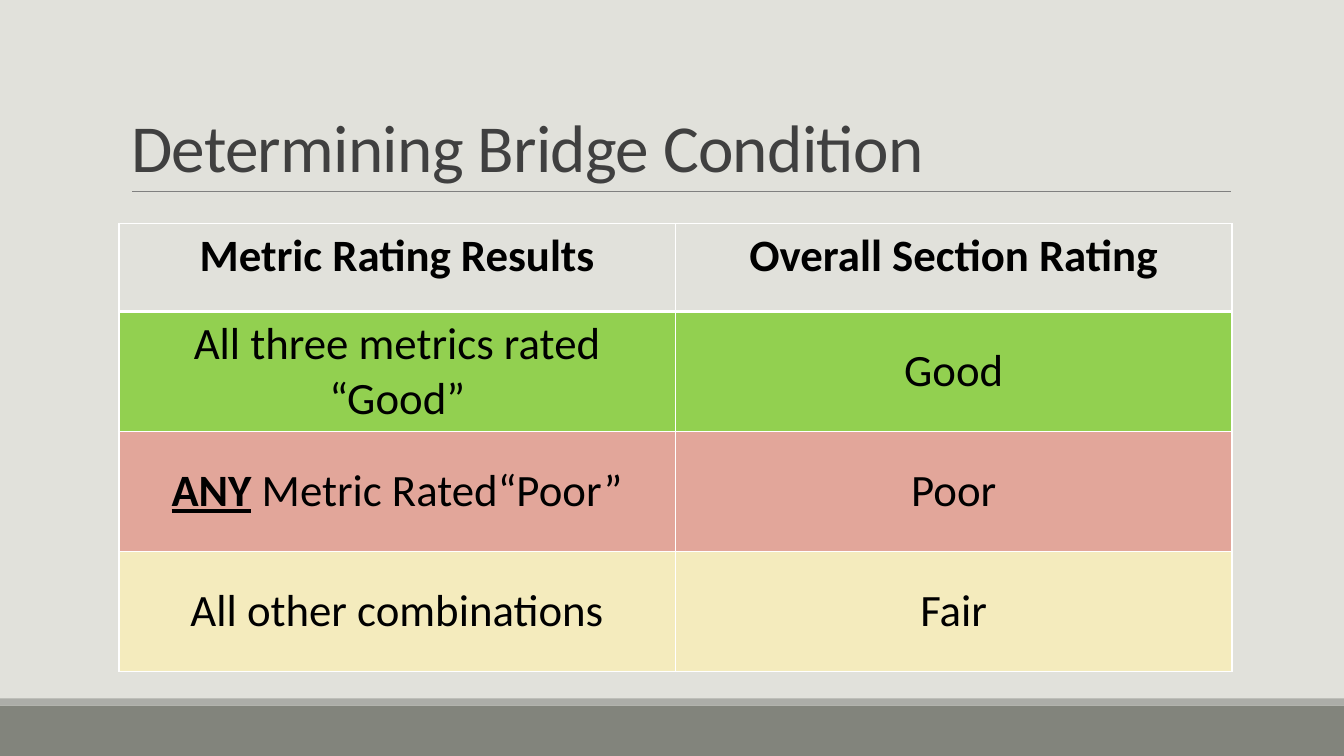
from lxml.etree import SubElement
from pptx import Presentation
from pptx.dml.color import RGBColor
from pptx.enum.shapes import MSO_CONNECTOR as Connector, MSO_SHAPE as Preset
from pptx.enum.text import MSO_ANCHOR as Anchor, PP_ALIGN as Align
from pptx.oxml.ns import qn
from pptx.util import Inches, Pt

WIDTH, HEIGHT = Inches(13.33), Inches(7.5)
FONT = "Calibri"
PAPER = RGBColor(0xE1, 0xE1, 0xDB)
BAND = RGBColor(0x82, 0x84, 0x7C)
STRIPE = RGBColor(0xAC, 0xAD, 0xA8)
RULE = RGBColor(0x80, 0x80, 0x80)
HEADING = RGBColor(0x40, 0x40, 0x40)
INK = RGBColor(0, 0, 0)
WHITE = RGBColor(0xFF, 0xFF, 0xFF)
GREEN = RGBColor(0x92, 0xD0, 0x50)
RED = RGBColor(0xE2, 0xA6, 0x9A)
YELLOW = RGBColor(0xF4, 0xEB, 0xBD)

COLUMN = Inches(5.52)
HEADER_ROW, RATING_ROW = Inches(0.87), Inches(1.19)
HEADERS = ("Metric Rating Results", "Overall Section Rating")
RATINGS = (
    (("", "All three metrics rated “Good”"), "Good", GREEN),
    (("ANY", " Metric Rated“Poor”"), "Poor", RED),
    (("", "All other combinations"), "Fair", YELLOW),
)


def add_bar(slide, top, height, color):
    bar = slide.shapes.add_shape(Preset.RECTANGLE, 0, top, WIDTH, height)
    bar.shadow.inherit = False
    bar.fill.solid()
    bar.fill.fore_color.rgb = color
    bar.line.fill.background()


def add_rule(slide, left, right, y):
    rule = slide.shapes.add_connector(Connector.STRAIGHT, left, y, right, y)
    rule.line.color.rgb = RULE
    rule.line.width = Pt(0.5)
    SubElement(rule._element.spPr, qn("a:effectLst"))


def set_title(slide, wording):
    title = slide.shapes.title
    title.left, title.top = Inches(1.2), Inches(0.31)
    title.width, title.height = Inches(11), Inches(1.59)
    title.text_frame.text = wording
    title.text_frame.vertical_anchor = Anchor.BOTTOM
    heading = title.text_frame.paragraphs[0]
    heading.alignment = Align.LEFT
    heading.line_spacing = 0.85
    heading.font.name = FONT
    heading.font.size = Pt(48)
    heading.font.color.rgb = HEADING
    heading.runs[0].font._element.set("spc", "-50")


def set_borders(cell, top, bottom):
    properties = cell._tc.get_or_add_tcPr()
    for edge, points in (("L", 1), ("R", 1), ("T", top), ("B", bottom)):
        line = SubElement(properties, qn(f"a:ln{edge}"), w=str(Pt(points)))
        SubElement(SubElement(line, qn("a:solidFill")), qn("a:srgbClr"), val=str(WHITE))


def fill_cell(cell, wording, color=None, stressed="", top=1, bottom=1):
    set_borders(cell, top, bottom)
    if color is None:
        cell.fill.background()
    else:
        cell.fill.solid()
        cell.fill.fore_color.rgb = color
        cell.vertical_anchor = Anchor.MIDDLE
    paragraph = cell.text_frame.paragraphs[0]
    paragraph.alignment = Align.CENTER
    paragraph.font.name = FONT
    paragraph.font.size = Pt(32)
    paragraph.font.color.rgb = INK
    paragraph.font.bold = color is None
    if stressed:
        stress = paragraph.add_run()
        stress.text = stressed
        stress.font.bold = stress.font.underline = True
    rest = paragraph.add_run()
    rest.text = wording
    rest.font.bold = color is None


def add_ratings(slide, left, top):
    height = HEADER_ROW + len(RATINGS) * RATING_ROW
    table = slide.shapes.add_table(
        len(RATINGS) + 1, len(HEADERS), left, top, len(HEADERS) * COLUMN, height
    ).table
    table.horz_banding = False
    for column, header in enumerate(HEADERS):
        table.columns[column].width = COLUMN
        fill_cell(table.cell(0, column), header, bottom=3)
    table.rows[0].height = HEADER_ROW
    for row, ((stressed, metric), rating, color) in enumerate(RATINGS, 1):
        table.rows[row].height = RATING_ROW
        top_edge = 3 if row == 1 else 1
        fill_cell(table.cell(row, 0), metric, color, stressed, top=top_edge)
        fill_cell(table.cell(row, 1), rating, color, top=top_edge)


def main():
    deck = Presentation()
    deck.slide_width, deck.slide_height = WIDTH, HEIGHT
    slide = deck.slides.add_slide(deck.slide_layouts[5])
    slide.background.fill.solid()
    slide.background.fill.fore_color.rgb = PAPER
    add_bar(slide, Inches(7), Inches(0.5), BAND)
    add_bar(slide, Inches(6.93), Inches(0.07), STRIPE)
    add_rule(slide, Inches(1.31), Inches(12.21), Inches(1.9))
    set_title(slide, "Determining Bridge Condition")
    add_ratings(slide, Inches(1.18), Inches(2.22))
    deck.save("out.pptx")


if __name__ == "__main__":
    main()
